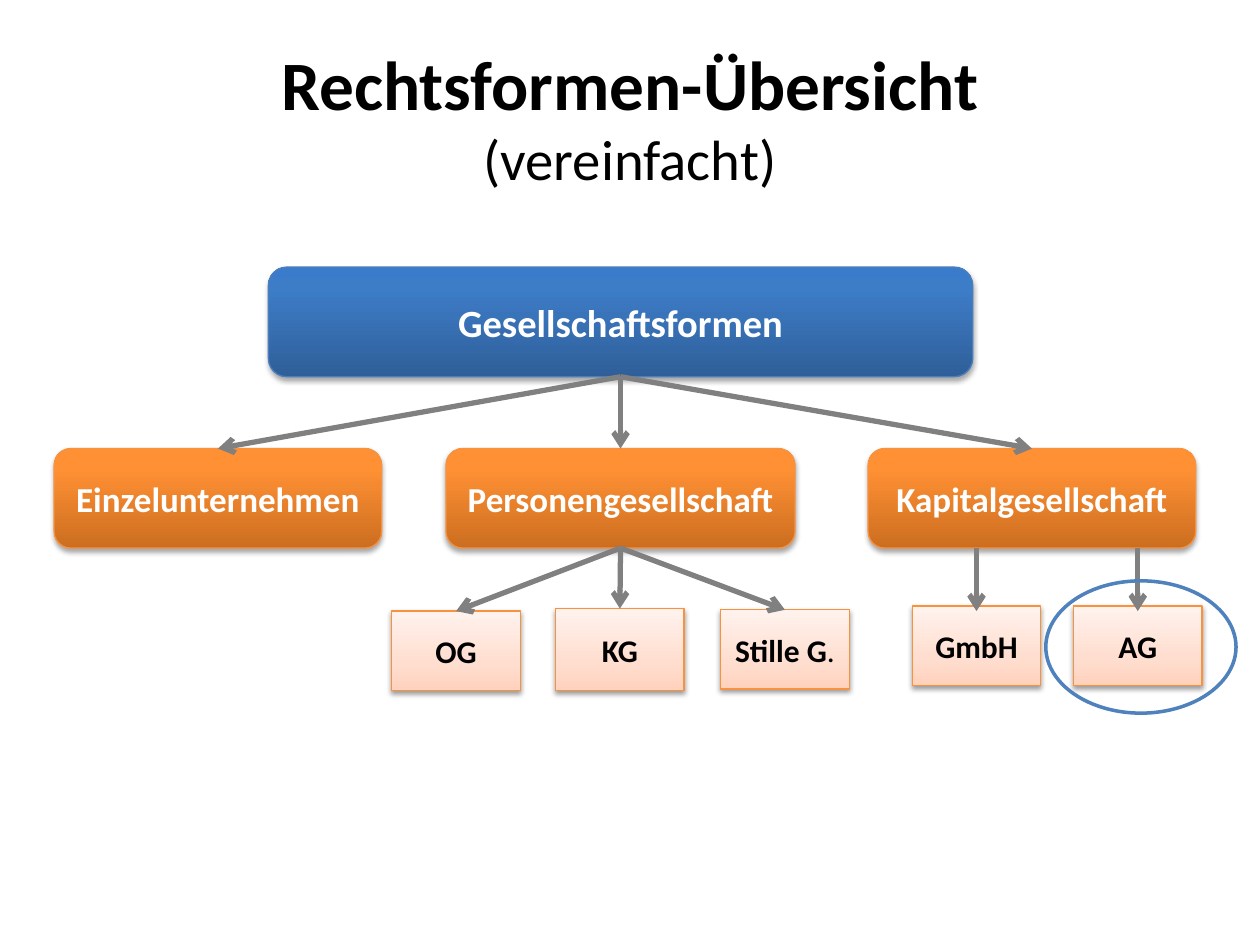
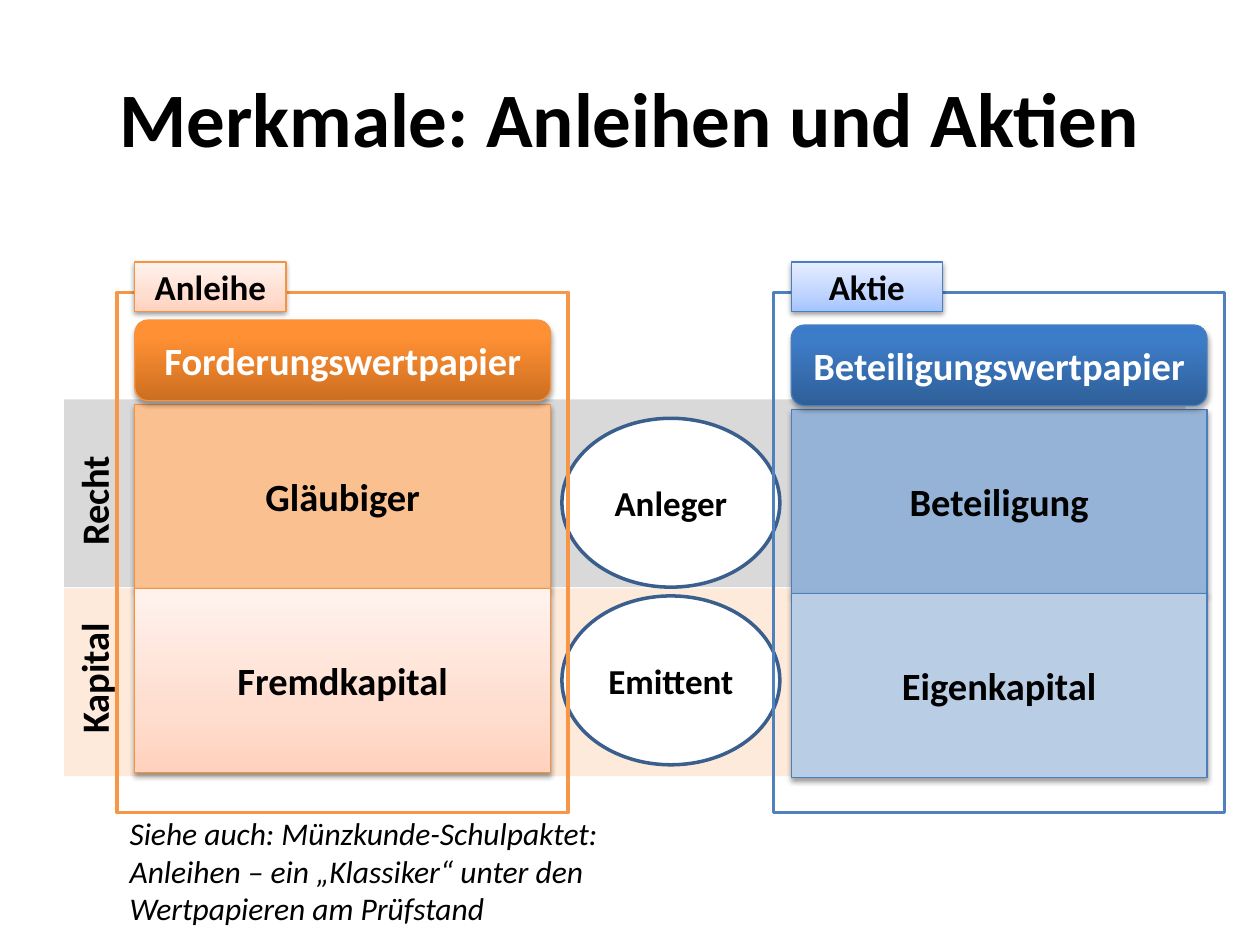
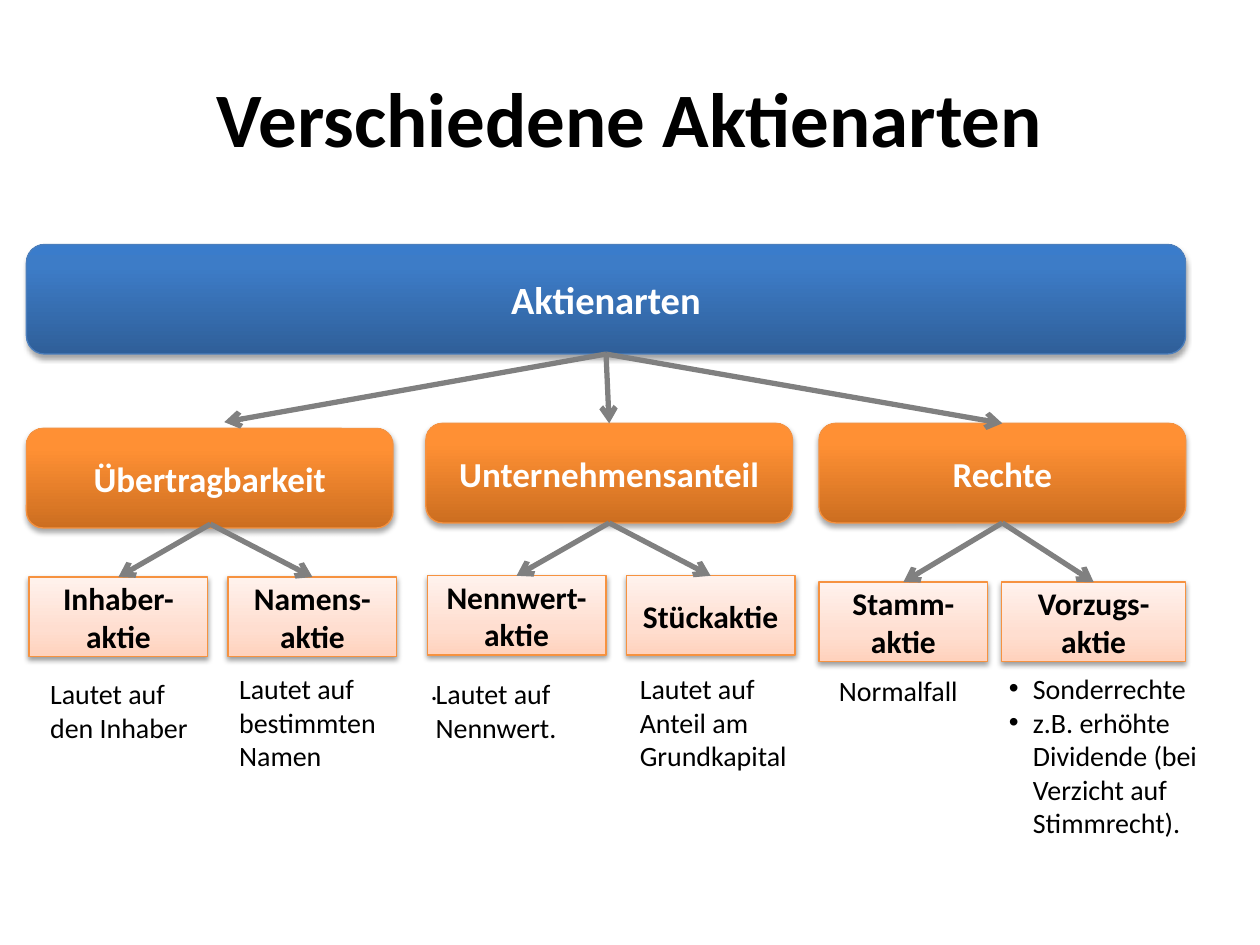
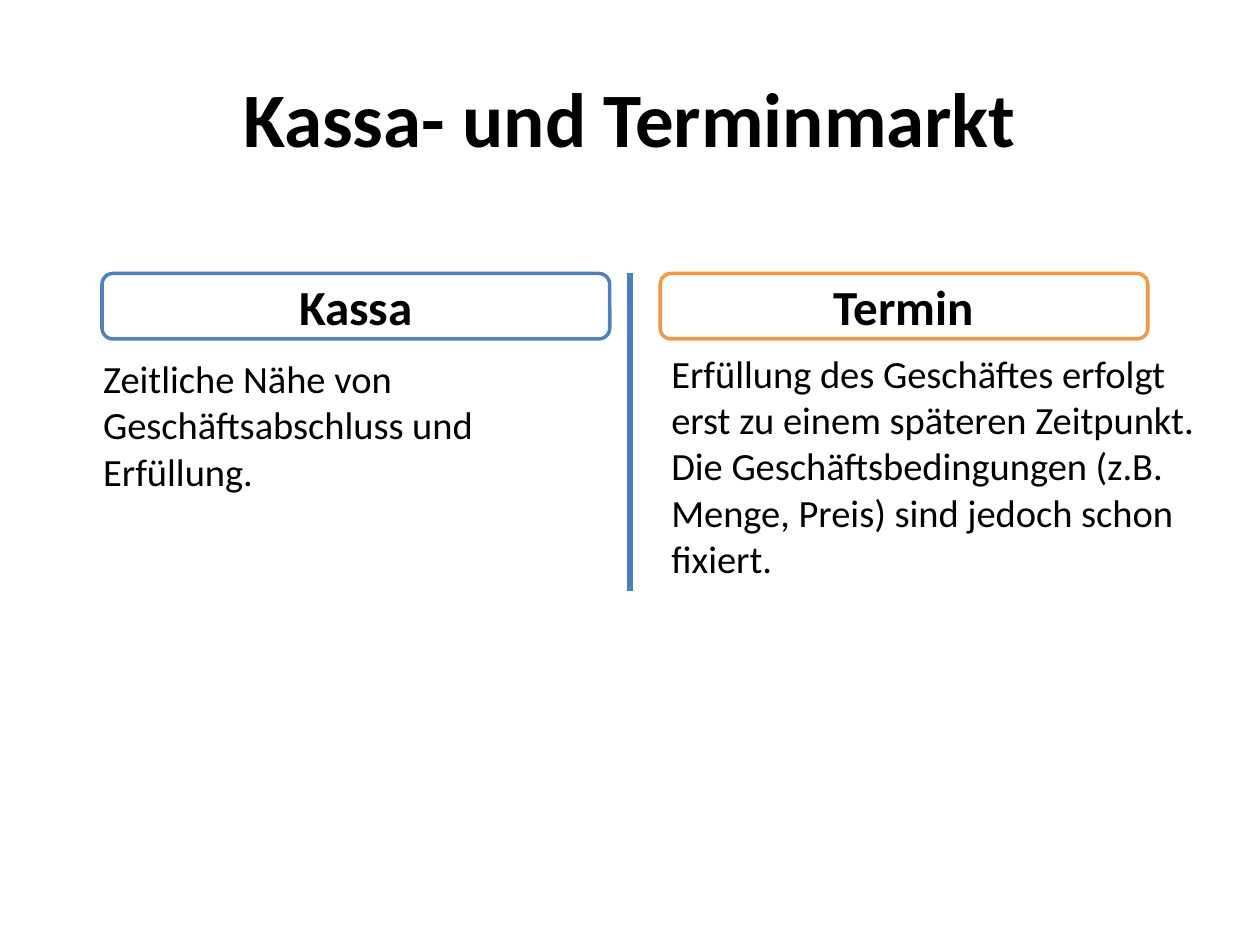
import dataclasses
from typing import Any, Optional, Union

import lxml.etree
import pptx
import pptx.dml.color
import pptx.enum.shapes
import pptx.enum.text
import pptx.oxml.ns
import pptx.util

Inches = pptx.util.Inches
Pt = pptx.util.Pt
qn = pptx.oxml.ns.qn
ALIGN = pptx.enum.text.PP_ALIGN
ANCHOR = pptx.enum.text.MSO_ANCHOR
FORM = pptx.enum.shapes.MSO_SHAPE

Gradient = tuple[tuple[int, str], ...]
Point = tuple[float, float]

# Shared look
FONT = "Calibri"
BLACK, WHITE, GREY = "000000", "FFFFFF", "808080"
BLUE, BLUE_EDGE = "4F81BD", "4B7EBC"
ORANGE, ORANGE_EDGE = "F79646", "F69240"
DEEP_BLUE: Gradient = ((0, "2F5F99"), (80, "3D7CC7"), (100, "3A7CCB"))
DEEP_ORANGE: Gradient = ((0, "CC6E20"), (80, "FF9034"), (100, "FF9136"))
PALE_BLUE: Gradient = ((0, "A4C4FF"), (35, "BFD4FF"), (100, "E6EEFF"))
PALE_ORANGE: Gradient = ((0, "FFD2BD"), (35, "FFDED0"), (100, "FFF2ED"))


@dataclasses.dataclass(frozen=True)
class Shadow:
    alpha: int
    distance: float
    blur: float = 3.1


@dataclasses.dataclass(frozen=True)
class Style:
    fill: Union[str, Gradient, None]
    edge: Optional[str] = None
    edge_width: float = 0.75
    form: Any = FORM.RECTANGLE
    ink: str = BLACK
    shadow: Optional[Shadow] = None


@dataclasses.dataclass(frozen=True)
class Run:
    text: str
    format: dict[str, Any] = dataclasses.field(default_factory=dict)


Text = Union[str, list[list[Run]]]


@dataclasses.dataclass(frozen=True)
class Box:
    left: float
    top: float
    width: float
    height: float
    style: Style
    text: Text = ""
    size: float = 18

    @property
    def top_middle(self) -> Point:
        return self.left + self.width / 2, self.top

    @property
    def bottom_middle(self) -> Point:
        return self.left + self.width / 2, self.top + self.height


@dataclasses.dataclass(frozen=True)
class Note:
    left: float
    top: float
    width: float
    height: float
    text: Text
    size: float = 16
    bold: bool = False
    italic: bool = False
    rotation: int = 0
    bullets: bool = False
    grows: bool = True


@dataclasses.dataclass(frozen=True)
class Column:
    left: float
    cells_top: float
    frame: Style
    tag: tuple[str, Style]
    heading: tuple[str, Style]
    cells: list[tuple[str, Style]]


HEAVY, LIGHT = Shadow(35, 1.8), Shadow(38, 1.6)


def banner(fill: Gradient, edge: str) -> Style:
    return Style(fill, edge, form=FORM.ROUNDED_RECTANGLE, ink=WHITE, shadow=HEAVY)


def card(fill: Union[str, Gradient], edge: str) -> Style:
    return Style(fill, edge, shadow=LIGHT)


BLUE_BANNER = banner(DEEP_BLUE, BLUE_EDGE)
ORANGE_BANNER = banner(DEEP_ORANGE, ORANGE_EDGE)
ORANGE_CARD = card(PALE_ORANGE, ORANGE_EDGE)
BLUE_CARD = card(PALE_BLUE, BLUE_EDGE)
BLUE_FRAME = Style(None, BLUE, 2)
ORANGE_FRAME = Style(None, ORANGE, 2)


def colour(code: str) -> pptx.dml.color.RGBColor:
    return pptx.dml.color.RGBColor.from_string(code)


def apply(target: Any, values: dict[str, Any]) -> None:
    for name, value in values.items():
        setattr(target, name, value)


def add_bullet(paragraph: Any) -> None:
    properties = paragraph._p.get_or_add_pPr()
    indent = Inches(0.19)
    properties.set("marL", str(indent))
    properties.set("indent", str(-indent))
    lxml.etree.SubElement(properties, qn("a:buFont"), typeface="Arial")
    lxml.etree.SubElement(properties, qn("a:buChar"), char="•")


def write(frame: Any, text: Text, ink: str, format: dict[str, Any],
          align: Any, bullets: bool = False) -> None:
    """Fill a text frame; a line feed within a run becomes a line break."""
    frame.word_wrap = True
    paragraphs = [[Run(text)]] if isinstance(text, str) else text
    for number, runs in enumerate(paragraphs):
        paragraph = frame.paragraphs[0] if number == 0 else frame.add_paragraph()
        paragraph.alignment = align
        if bullets:
            add_bullet(paragraph)
        for part in runs:
            for line_number, line in enumerate(part.text.split("\n")):
                if line_number:
                    paragraph.add_line_break()
                if line:
                    run = paragraph.add_run()
                    run.text = line
                    apply(run.font, {"name": FONT, **format, **part.format})
                    run.font.color.rgb = colour(ink)


def paint(shape: Any, fill: Union[str, Gradient, None]) -> None:
    if fill is None:
        shape.fill.background()
    elif isinstance(fill, str):
        shape.fill.solid()
        shape.fill.fore_color.rgb = colour(fill)
    else:
        shape.fill.gradient()
        shape.fill.gradient_angle = 90
        stops = shape.element.spPr.find(".//" + qn("a:gsLst"))
        for stop in list(stops):
            stops.remove(stop)
        for position, code in fill:
            stop = lxml.etree.SubElement(stops, qn("a:gs"), pos=str(position * 1000))
            lxml.etree.SubElement(stop, qn("a:srgbClr"), val=code)


def cast_shadow(shape: Any, shadow: Shadow) -> None:
    effects = shape.element.spPr.find(qn("a:effectLst"))
    outer = lxml.etree.SubElement(
        effects, qn("a:outerShdw"), blurRad=str(Pt(shadow.blur)),
        dist=str(Pt(shadow.distance)), dir="5400000", rotWithShape="0")
    tone = lxml.etree.SubElement(outer, qn("a:srgbClr"), val=BLACK)
    lxml.etree.SubElement(tone, qn("a:alpha"), val=str(shadow.alpha * 1000))


def draw_box(slide: Any, box: Box) -> None:
    style = box.style
    shape = slide.shapes.add_shape(
        style.form, Inches(box.left), Inches(box.top),
        Inches(box.width), Inches(box.height))
    shape.shadow.inherit = False
    paint(shape, style.fill)
    if style.edge:
        shape.line.color.rgb = colour(style.edge)
        shape.line.width = Pt(style.edge_width)
    else:
        shape.line.fill.background()
    if style.shadow:
        cast_shadow(shape, style.shadow)
    if box.text:
        shape.text_frame.vertical_anchor = ANCHOR.MIDDLE
        write(shape.text_frame, box.text, style.ink,
              {"size": Pt(box.size), "bold": True}, ALIGN.CENTER)


def draw_note(slide: Any, note: Note) -> None:
    area = slide.shapes.add_textbox(
        Inches(note.left), Inches(note.top), Inches(note.width), Inches(note.height))
    area.rotation = note.rotation
    if note.grows:
        area.text_frame.auto_size = pptx.enum.text.MSO_AUTO_SIZE.SHAPE_TO_FIT_TEXT
    write(area.text_frame, note.text, BLACK,
          {"size": Pt(note.size), "bold": note.bold, "italic": note.italic},
          ALIGN.LEFT, note.bullets)


def draw_line(slide: Any, start: Point, end: Point, code: str = GREY,
              arrow: bool = True) -> None:
    line = slide.shapes.add_connector(
        pptx.enum.shapes.MSO_CONNECTOR.STRAIGHT,
        *(Inches(value) for value in start + end))
    line.line.color.rgb = colour(code)
    line.line.width = Pt(3)
    if arrow:
        lxml.etree.SubElement(line.line._get_or_add_ln(), qn("a:tailEnd"), type="arrow")
    lxml.etree.SubElement(line.element.spPr, qn("a:effectLst"))


def draw_branches(slide: Any, start: Point, children: list[Box]) -> None:
    for child in children:
        draw_line(slide, start, child.top_middle)


def add_slide(deck: Any, title: Text) -> Any:
    slide = deck.slides.add_slide(deck.slide_layouts[6])
    heading = slide.shapes.add_textbox(Inches(0.5), Inches(0.3), Inches(9), Inches(1.25))
    heading.text_frame.vertical_anchor = ANCHOR.MIDDLE
    write(heading.text_frame, title, BLACK, {"size": Pt(44), "bold": True}, ALIGN.CENTER)
    return slide


def build_legal_forms(deck: Any) -> None:
    slide = add_slide(deck, [[
        Run("Rechtsformen-Übersicht\n", {"size": Pt(39.6)}),
        Run("(vereinfacht)", {"size": Pt(32.4), "bold": False})]])

    root = Box(2.13, 2.12, 5.59, 0.87, BLUE_BANNER, "Gesellschaftsformen", 22)
    groups = [
        Box(left, 3.56, width, 0.79, ORANGE_BANNER, name, 20)
        for left, width, name in (
            (0.43, 2.6, "Einzelunternehmen"),
            (3.54, 2.77, "Personengesellschaft"),
            (6.89, 2.6, "Kapitalgesellschaft"))]
    silent = [[Run("Stille G"), Run(".", {"bold": False})]]
    partnerships = [
        Box(left, top, 1.02, height, ORANGE_CARD, name)
        for left, top, height, name in (
            (3.11, 4.85, 0.63, "OG"), (4.41, 4.83, 0.65, "KG"),
            (5.72, 4.84, 0.63, silent))]
    corporations = [
        Box(left, 4.81, 1.02, 0.63, ORANGE_CARD, name)
        for left, name in ((7.24, "GmbH"), (8.52, "AG"))]

    for box in [root, *groups, *partnerships, *corporations]:
        draw_box(slide, box)
    draw_branches(slide, root.bottom_middle, groups)
    draw_branches(slide, groups[1].bottom_middle, partnerships)
    for corporation in corporations:
        centre = corporation.top_middle[0]
        draw_line(slide, (centre, 4.35), (centre, 4.85))

    # Ring around the AG
    draw_box(slide, Box(8.3, 4.61, 1.51, 1.05, Style(None, BLUE, 2, FORM.OVAL)))


def draw_column(slide: Any, column: Column) -> None:
    cell_height = 1.46
    for row, (name, style) in enumerate(column.cells):
        draw_box(slide, Box(column.left, column.cells_top + row * cell_height,
                            3.3, cell_height, style, name, 22))
    name, style = column.heading
    draw_box(slide, Box(column.left, column.cells_top - 0.67, 3.3, 0.64, style, name, 22))
    draw_box(slide, Box(column.left - 0.14, 2.32, 3.58, 4.13, column.frame))
    name, style = column.tag
    draw_box(slide, Box(column.left, 2.08, 1.2, 0.39, style, name, 20))


def build_bonds_and_shares(deck: Any) -> None:
    slide = add_slide(deck, "Merkmale: Anleihen und Aktien")

    # Row bands with their side labels and parties
    for top, band in ((4.67, "FDEADA"), (3.17, "D9D9D9")):
        draw_box(slide, Box(0.51, top, 8.9, 1.49, Style(band)))
    draw_note(slide, Note(0.01, 3.46, 1.47, 0.47, "Recht", 22, bold=True, rotation=270))
    draw_note(slide, Note(-0.12, 4.82, 1.73, 0.47, "Kapital", 22, bold=True, rotation=270))
    party_style = Style(WHITE, "3A5F8C", 2, FORM.OVAL)
    for top, party in ((3.32, "Anleger"), (4.73, "Emittent")):
        draw_box(slide, Box(4.46, top, 1.73, 1.34, party_style, party, 20))

    # Compared securities
    share = Column(
        6.28, 3.25, BLUE_FRAME, ("Aktie", BLUE_CARD),
        ("Beteiligungswertpapier", BLUE_BANNER),
        [("Beteiligung", card("95B3D7", BLUE_EDGE)),
         ("Eigenkapital", card("B9CDE5", BLUE_EDGE))])
    bond = Column(
        1.07, 3.21, ORANGE_FRAME, ("Anleihe", ORANGE_CARD),
        ("Forderungswertpapier", ORANGE_BANNER),
        [("Gläubiger", card("FAC090", ORANGE_EDGE)),
         ("Fremdkapital", ORANGE_CARD)])
    for column in (share, bond):
        draw_column(slide, column)

    draw_note(slide, Note(0.93, 6.41, 4.25, 1.01, [
        [Run("Siehe auch: Münzkunde-Schulpaktet: Anleihen – ein „Klassiker“ unter den")],
        [Run("Wertpapieren am Prüfstand")]], 18, italic=True))


def build_share_types(deck: Any) -> None:
    slide = add_slide(deck, "Verschiedene Aktienarten")

    root = Box(0.21, 1.94, 9.2, 0.87, BLUE_BANNER, "Aktienarten", 22)
    transfer, stake, rights = [
        Box(left, top, 2.91, 0.79, ORANGE_BANNER, name, 20)
        for left, top, name in (
            (0.21, 3.4, "Übertragbarkeit"),
            (3.38, 3.36, "Unternehmensanteil"),
            (6.5, 3.36, "Rechte"))]
    kinds = [
        Box(left, top, width, 0.63, ORANGE_CARD, name)
        for left, top, width, name in (
            (0.23, 4.58, 1.42, "Inhaber-aktie"), (1.81, 4.58, 1.34, "Namens-aktie"),
            (3.39, 4.57, 1.42, "Nennwert-aktie"), (4.97, 4.57, 1.34, "Stückaktie"),
            (6.5, 4.62, 1.34, "Stamm-aktie"), (7.95, 4.62, 1.46, "Vorzugs-aktie"))]
    for box in [root, transfer, stake, rights, *kinds]:
        draw_box(slide, box)

    draw_branches(slide, root.bottom_middle, [stake, rights])
    draw_line(slide, root.bottom_middle, (1.78, 3.35))
    draw_branches(slide, (1.67, 4.16), kinds[:2])
    draw_branches(slide, stake.bottom_middle, kinds[2:4])
    draw_branches(slide, rights.bottom_middle, kinds[4:])

    # Explanations below the kinds
    for note in (
            Note(0.3, 5.32, 1.47, 0.64, "Lautet auf den Inhaber"),
            Note(1.8, 5.28, 1.36, 0.91, "Lautet auf bestimmten Namen"),
            Note(3.32, 5.29, 1.75, 0.37, "."),
            Note(3.36, 5.32, 1.47, 0.64, "Lautet auf Nennwert."),
            Note(4.98, 5.28, 1.68, 0.91, "Lautet auf Anteil am Grundkapital"),
            Note(6.56, 5.3, 1.35, 0.37, "Normalfall"),
            Note(7.91, 5.28, 1.86, 1.45, [
                [Run("Sonderrechte")],
                [Run("z.B. erhöhte Dividende (bei Verzicht auf Stimmrecht).")]],
                bullets=True)):
        draw_note(slide, note)


def build_markets(deck: Any) -> None:
    slide = add_slide(deck, "Kassa- und Terminmarkt")
    for left, width, edge, market in (
            (0.81, 4.03, BLUE, "Kassa"), (5.24, 3.87, ORANGE, "Termin")):
        style = Style(WHITE, edge, 2, FORM.ROUNDED_RECTANGLE)
        draw_box(slide, Box(left, 2.17, width, 0.52, style, market, 28))
    draw_note(slide, Note(
        0.72, 2.77, 4.28, 1.5,
        "Zeitliche Nähe von Geschäftsabschluss und Erfüllung.", 22, grows=False))
    draw_note(slide, Note(
        5.23, 2.73, 4.5, 1.97,
        "Erfüllung des Geschäftes erfolgt erst zu einem späteren Zeitpunkt. "
        "Die Geschäftsbedingungen (z.B. Menge, Preis) sind jedoch schon fixiert.",
        22, grows=False))
    draw_line(slide, (5, 2.17), (5, 4.69), BLUE_EDGE, arrow=False)


def main() -> None:
    deck = pptx.Presentation()
    apply(deck, {"slide_width": Inches(10), "slide_height": Inches(7.5)})
    for build in (build_legal_forms, build_bonds_and_shares,
                  build_share_types, build_markets):
        build(deck)
    deck.save("out.pptx")


if __name__ == "__main__":
    main()
